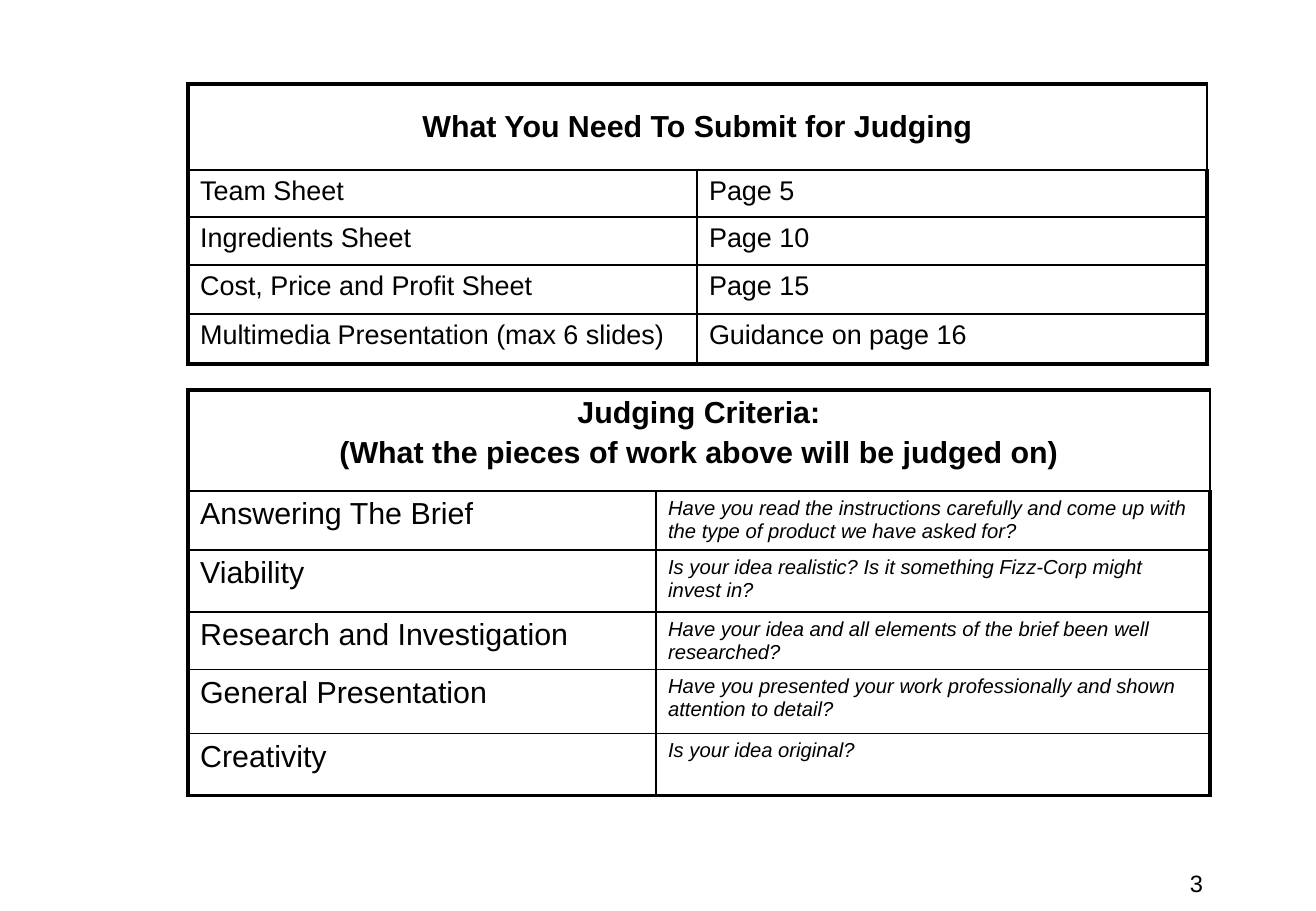
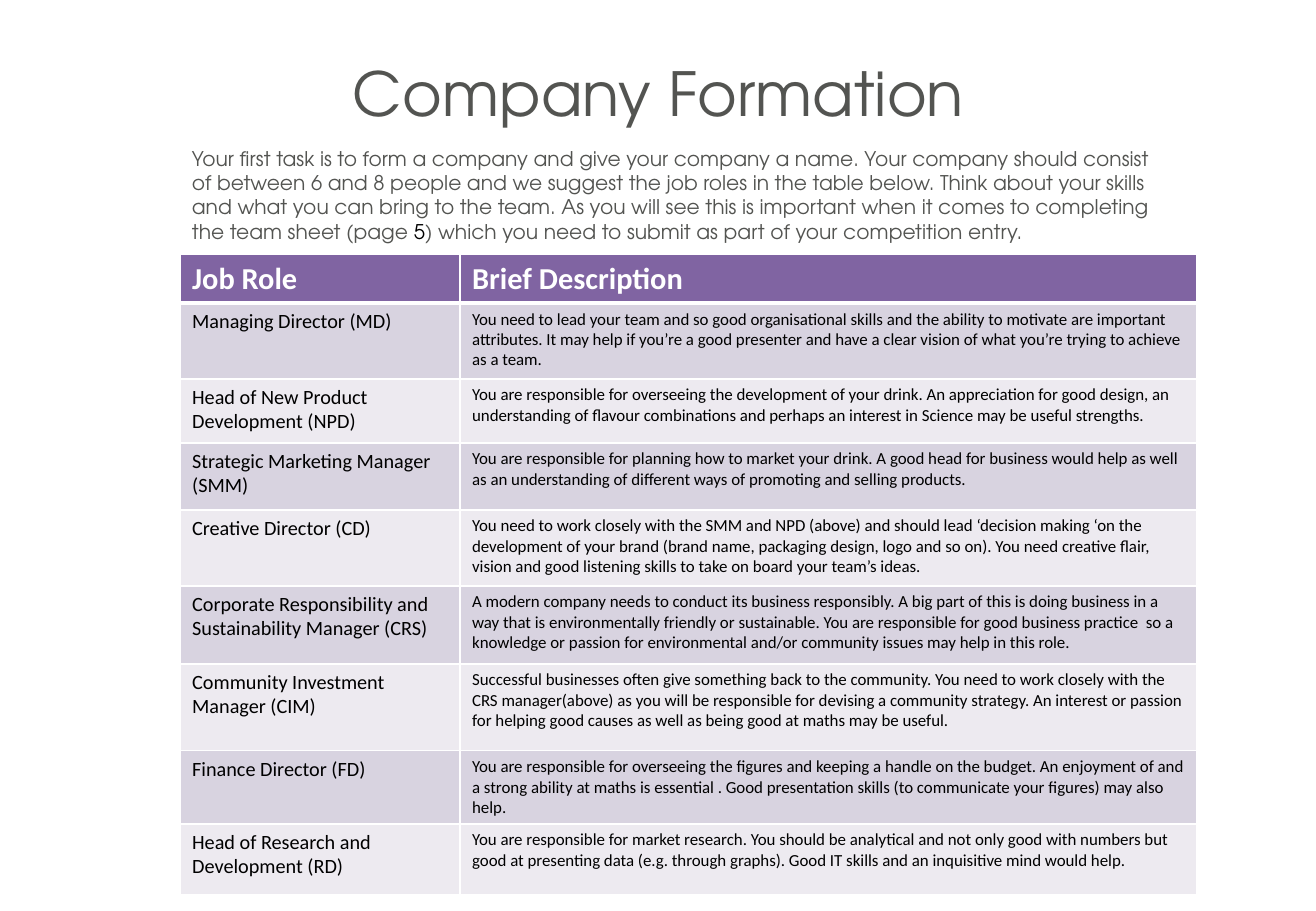
from dataclasses import dataclass

from lxml.etree import SubElement
from pptx import Presentation
from pptx.dml.color import RGBColor
from pptx.enum.text import MSO_ANCHOR, MSO_AUTO_SIZE, PP_ALIGN
from pptx.oxml.ns import qn
from pptx.util import Emu, Pt

SCALE = 914400 / 121.5  # EMU in one px
WIDE, HIGH = 1316, 911


def px(num):
    return Emu(round(num * SCALE))


@dataclass(frozen=True)
class Theme:
    ink: str = "000000"
    grey: str = "535451"
    white: str = "FFFFFF"
    plum: str = "8064A2"
    bands: tuple = ("D8D3E0", "EDEAF0")
    sans: str = "Arial"
    round: str = "TeX Gyre Adventor"
    cell: str = "Calibri"
    title: int = 36
    head: int = 18
    large: int = 16
    page: int = 14
    body: int = 12
    small: int = 10
    gap: float = 3.6


THEME = Theme()


@dataclass(frozen=True)
class Look:
    """Style of a table; line widths are in points."""
    font: str
    sizes: tuple
    line: str = THEME.ink
    outer: float = 2.25
    rule: float = 1
    inner: float = 1
    fill: str = ""
    bands: tuple = ("",)
    ink: str = THEME.ink
    align: PP_ALIGN = PP_ALIGN.CENTER
    anchor: MSO_ANCHOR = MSO_ANCHOR.TOP
    slant: bool = False


def style(font, face, size, color, bold=False, slant=False):
    font.name, font.size = face, Pt(size)
    font.bold, font.italic = bold, slant
    font.color.rgb = RGBColor.from_string(color)


def paint(cell, color):
    if color:
        cell.fill.solid()
        cell.fill.fore_color.rgb = RGBColor.from_string(color)
    else:
        cell.fill.background()


def edge(cell, color, widths):
    """Draw the left, right, top and bottom borders, in that order."""
    props = cell._tc.get_or_add_tcPr()
    for side, width in zip("LRTB", widths):
        line = SubElement(props, qn(f"a:ln{side}"), w=str(Pt(width)))
        fill = SubElement(line, qn("a:solidFill"))
        SubElement(fill, qn("a:srgbClr"), val=color)


class Deck:
    def __init__(self, theme):
        self.theme = theme
        self.prs = Presentation()
        self.prs.slide_width, self.prs.slide_height = px(WIDE), px(HIGH)
        self.slide = None

    def add(self, layout):
        self.slide = self.prs.slides.add_slide(self.prs.slide_layouts[layout])

    def title(self, text, x, y, w, h):
        shape = self.slide.shapes.title
        shape.left, shape.top, shape.width, shape.height = map(px, (x, y, w, h))
        frame = shape.text_frame
        frame.text = text
        frame.auto_size = MSO_AUTO_SIZE.NONE
        frame.vertical_anchor = MSO_ANCHOR.TOP
        para = frame.paragraphs[0]
        para.alignment = PP_ALIGN.CENTER
        style(para.runs[0].font, self.theme.round, self.theme.title,
              self.theme.grey)

    def text(self, parts, x, y, w, h, face, size, align=PP_ALIGN.LEFT):
        """Add a text box from pairs of wording and colour."""
        box = self.slide.shapes.add_textbox(*map(px, (x, y, w, h)))
        box.text_frame.word_wrap = True
        para = box.text_frame.paragraphs[0]
        para.alignment = align
        for words, color in parts:
            run = para.add_run()
            run.text = words
            style(run.font, face, size, color)

    def table(self, data, x, y, cols, rows, look):
        frame = self.slide.shapes.add_table(
            len(rows), len(cols), *map(px, (x, y, sum(cols), sum(rows))))
        table = frame.table
        table.first_row = table.horz_banding = False
        for col, width in zip(table.columns, cols):
            col.width = px(width)
        for row, height in zip(table.rows, rows):
            row.height = px(height)
        last = len(rows) - 1, len(cols) - 1
        for r in range(len(rows)):
            for c in range(len(cols)):
                self.cell(table.cell(r, c), r, c, last, look)
        if len(data[0]) == 1:
            table.cell(0, 0).merge(table.cell(0, last[1]))
        for r, words in enumerate(data):
            for c, text in enumerate(words):
                self.fill(table.cell(r, c), text, r, c, look)

    def cell(self, cell, r, c, last, look):
        level = {0: look.outer, 1: look.rule, last[0] + 1: look.outer}
        edge(cell, look.line, (
            look.inner if c else look.outer,
            look.inner if c < last[1] else look.outer,
            level.get(r, look.inner),
            level.get(r + 1, look.inner)))
        paint(cell, look.bands[(r - 1) % len(look.bands)] if r else look.fill)

    def fill(self, cell, text, r, c, look):
        cell.text_frame.text = text
        cell.vertical_anchor = MSO_ANCHOR.TOP if r else look.anchor
        size = look.sizes[c + 1] if r else look.sizes[0]
        for i, para in enumerate(cell.text_frame.paragraphs):
            para.alignment = PP_ALIGN.LEFT if r else look.align
            if i:
                para.space_before = Pt(self.theme.gap)
            style(para.runs[0].font, look.font, size,
                  self.theme.ink if r else look.ink,
                  bold=r == 0, slant=look.slant and r > 0 and c > 0)


SUBMIT = Look(THEME.sans, (THEME.head, THEME.large, THEME.large),
              anchor=MSO_ANCHOR.MIDDLE)
JUDGE = Look(THEME.sans, (THEME.head, THEME.head, THEME.body), slant=True)
ROLES = Look(THEME.cell, (THEME.head, THEME.body, THEME.small),
             line=THEME.white, outer=1, rule=3, fill=THEME.plum,
             bands=THEME.bands, ink=THEME.white, align=PP_ALIGN.LEFT)

SHEETS = [
    ("What You Need To Submit for Judging",),
    ("Team Sheet", "Page 5"),
    ("Ingredients Sheet", "Page 10"),
    ("Cost, Price and Profit Sheet", "Page 15"),
    ("Multimedia Presentation (max 6 slides)", "Guidance on page 16"),
]
TESTS = [
    ("Judging Criteria:\n(What the pieces of work above will be judged on)",),
    ("Answering The Brief",
     "Have you read the instructions carefully and come up with the type of "
     "product we have asked for?"),
    ("Viability",
     "Is your idea realistic? Is it something Fizz-Corp might invest in?"),
    ("Research and Investigation",
     "Have your idea and all elements of the brief been well researched?"),
    ("General Presentation",
     "Have you presented your work professionally and shown attention to "
     "detail?"),
    ("Creativity", "Is your idea original?"),
]
INTRO = [
    ("Your first task is to form a company and give your company a name. Your "
     "company should consist of between 6 and 8 people and we suggest the job "
     "roles in the table below. Think about your skills and what you can bring "
     "to the team. As you will see this is important when it comes to "
     "completing the team sheet (page ", THEME.grey),
    ("5", THEME.ink),
    (") which you need to submit as part of your competition entry.",
     THEME.grey),
]
JOBS = [
    ("Job Role", "Brief Description"),
    ("Managing Director (MD)",
     "You need to lead your team and so good organisational skills and the "
     "ability to motivate are important attributes. It may help if you’re a "
     "good presenter and have a clear vision of what you’re trying to achieve "
     "as a team."),
    ("Head of New Product Development (NPD)",
     "You are responsible for overseeing the development of your drink. An "
     "appreciation for good design, an understanding of flavour combinations "
     "and perhaps an interest in Science may be useful strengths."),
    ("Strategic Marketing Manager (SMM)",
     "You are responsible for planning how to market your drink. A good head "
     "for business would help as well as an understanding of different ways of "
     "promoting and selling products."),
    ("Creative Director (CD)",
     "You need to work closely with the SMM and NPD (above) and should lead "
     "‘decision making ‘on the development of your brand (brand name, packaging "
     "design, logo and so on). You need creative flair, vision and good "
     "listening skills to take on board your team’s ideas."),
    ("Corporate Responsibility and Sustainability Manager (CRS)",
     "A modern company needs to conduct its business responsibly. A big part of "
     "this is doing business in a way that is environmentally friendly or "
     "sustainable. You are responsible for good business practice  so a "
     "knowledge or passion for environmental and/or community issues may help "
     "in this role."),
    ("Community Investment Manager (CIM)",
     "Successful businesses often give something back to the community. You "
     "need to work closely with the CRS manager(above) as you will be "
     "responsible for devising a community strategy. An interest or passion "
     "for helping good causes as well as being good at maths may be useful."),
    ("Finance Director (FD)",
     "You are responsible for overseeing the figures and keeping a handle on "
     "the budget. An enjoyment of and a strong ability at maths is essential . "
     "Good presentation skills (to communicate your figures) may also help."),
    ("Head of Research and Development (RD)",
     "You are responsible for market research. You should be analytical and "
     "not only good with numbers but good at presenting data (e.g. through "
     "graphs). Good IT skills and an inquisitive mind would help."),
]


def main():
    deck = Deck(THEME)

    deck.add(6)
    deck.table(SHEETS, 188, 84, (509, 510), (86, 47, 48, 49, 50), SUBMIT)
    deck.table(TESTS, 188, 390, (468, 554), (101, 59, 62, 57, 64, 62), JUDGE)
    deck.text([("3", THEME.ink)], 908, 863, 307, 48, THEME.sans, THEME.page,
              PP_ALIGN.RIGHT)

    deck.add(5)
    deck.title("Company Formation", 66, 50, 1185, 166)
    deck.text(INTRO, 180, 140, 999, 114, THEME.round, THEME.body)
    deck.table(JOBS, 180, 254, (280, 737),
               (49, 76, 64, 67, 76, 78, 87, 73, 71), ROLES)

    deck.prs.save("out.pptx")


if __name__ == "__main__":
    main()
